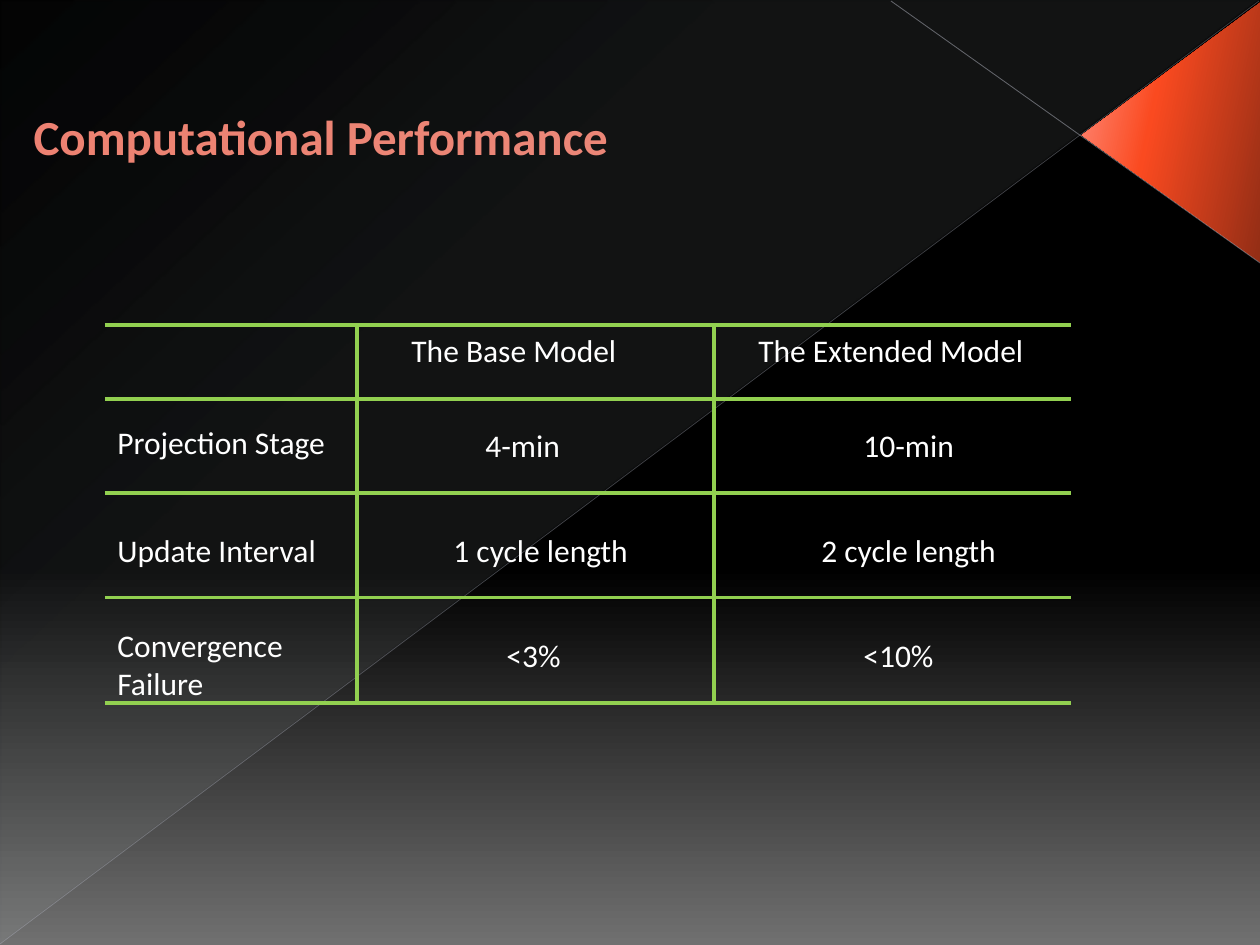
import pptx
import pptx.util
import pptx.dml.color
import pptx.enum.shapes
import pptx.enum.text
import pptx.oxml
import pptx.oxml.ns

RGB = pptx.dml.color.RGBColor
BLACK = RGB(0, 0, 0)
GREY = RGB(0x70, 0x70, 0x70)
MIST = RGB(0xC5, 0xD1, 0xD7)
RUST = RGB(0x92, 0x2D, 0x15)
FLAME = RGB(0xFA, 0x4A, 0x20)
PEACH = RGB(0xFF, 0x90, 0x81)
SILVER = RGB(0xC2, 0xC5, 0xD2)
STEEL = RGB(0xBA, 0xBE, 0xCD)
CORAL = RGB(0xEF, 0x7F, 0x6E)
BROWN = RGB(0x91, 0x45, 0x33)
GREEN = RGB(0x92, 0xD0, 0x50)
WHITE = RGB(0xFF, 0xFF, 0xFF)

PX = 9144000 / 1260
FONT = "Calibri"
NS = pptx.oxml.ns.nsdecls("a")
qn = pptx.oxml.ns.qn
Pt = pptx.util.Pt
xml = pptx.oxml.parse_xml
KIND = pptx.enum.shapes.MSO_SHAPE
FIT = pptx.enum.text.MSO_AUTO_SIZE


def write(frame, text, size=18, color=WHITE, bold=False):
    para = frame.paragraphs[0]
    para.alignment = pptx.enum.text.PP_ALIGN.LEFT
    run = para.add_run()
    run.text = text
    run.font.name = FONT
    run.font.size = Pt(size)
    run.font.bold = bold
    run.font.color.rgb = color
    return run


def blend(fill, root, stops, turn):
    """Gradient of (percent, colour, opacity) stops, turned clockwise."""
    fill.gradient()
    fill.gradient_angle = 360 - turn
    old = next(root.iter(qn("a:gsLst")))
    marks = "".join(
        f'<a:gs pos="{at * 1000}"><a:srgbClr val="{color}">'
        f'<a:alpha val="{alpha * 1000}"/></a:srgbClr></a:gs>'
        for at, color, alpha in stops)
    old.getparent().replace(old, xml(f"<a:gsLst {NS}>{marks}</a:gsLst>"))


deck = pptx.Presentation()
deck.slide_width, deck.slide_height = round(1260 * PX), round(945 * PX)
slide = deck.slides.add_slide(deck.slide_layouts[5])
shapes = slide.shapes

# Background
blend(slide.background.fill, slide.element,
      [(0, BLACK, 100), (60, BLACK, 100), (100, GREY, 100)], 90)

# Pale corner and orange wedge
decor = [
    (KIND.RIGHT_TRIANGLE, (1, 1, 1258, 943), 0,
     [(0, MIST, 10), (70, MIST, 8), (100, MIST, 1)], 133),
    (KIND.ISOSCELES_TRIANGLE, (1041, 43, 261, 179), 90,
     [(0, RUST, 100), (60, FLAME, 100), (100, PEACH, 100)], 258),
]
for kind, box, spin, stops, turn in decor:
    shape = shapes.add_shape(kind, *[round(v * PX) for v in box])
    shape.shadow.inherit = False
    shape.line.fill.background()
    shape.rotation = spin
    shape.element.spPr.xfrm.set("flipV", "1")
    blend(shape.fill, shape.element, stops, turn)
    if spin:
        shape.adjustments[0] = 0.51

# Title
title = shapes.title
title.left, title.top, title.width, title.height = [
    round(v * PX) for v in (21, 42, 1124, 188)]
title.text_frame.vertical_anchor = pptx.enum.text.MSO_ANCHOR.MIDDLE
run = write(title.text_frame, "Computational Performance",
            size=28, color=CORAL, bold=True)
run.font._element.insert(0, xml(
    f'<a:ln {NS} w="{Pt(0.5)}"><a:solidFill><a:srgbClr val="{BROWN}"/>'
    "</a:solidFill></a:ln>"))

# Thin diagonals, then the green rules of the grid
lines = [((1260, 263, 891, 1), SILVER, 0.47, 45),
         ((0, 944, 1259, 1), STEEL, 0.39, 35)]
lines += [((105, y, 1071, y), GREEN, 1.75, 100)
          for y in (325, 399, 493, 598, 703)]
lines += [((x, 325, x, 703), GREEN, 1.75, 100) for x in (357, 714)]
for ends, color, width, alpha in lines:
    line = shapes.add_connector(pptx.enum.shapes.MSO_CONNECTOR.STRAIGHT,
                                *[round(v * PX) for v in ends])
    line.line.color.rgb = color
    line.line.width = Pt(width)
    if alpha < 100:
        tint = next(line.element.spPr.iter(qn("a:srgbClr")))
        tint.append(xml(f'<a:alpha {NS} val="{alpha * 1000}"/>'))
    line.element.spPr.append(xml(f"<a:effectLst {NS}/>"))

# Grid text: left, top, width, height, wrapped or not
labels = [
    ("The Base Model", 399, 325, 273, 51, True),
    ("The Extended Model", 746, 325, 315, 51, True),
    ("Projection Stage", 105, 417, 273, 51, True),
    ("4-min", 473, 420, 101, 51, False),
    ("10-min", 851, 420, 117, 51, False),
    ("Update Interval", 105, 525, 273, 51, True),
    ("1 cycle length", 441, 525, 209, 51, False),
    ("2 cycle length", 809, 525, 209, 51, False),
    ("Convergence Failure", 105, 620, 273, 89, True),
    ("<3%", 494, 630, 81, 51, False),
    ("<10%", 851, 630, 96, 51, False),
]
for text, *box, wrap in labels:
    frame = shapes.add_textbox(*[round(v * PX) for v in box]).text_frame
    frame.word_wrap = wrap
    frame.auto_size = FIT.SHAPE_TO_FIT_TEXT
    write(frame, text)

deck.save("out.pptx")
